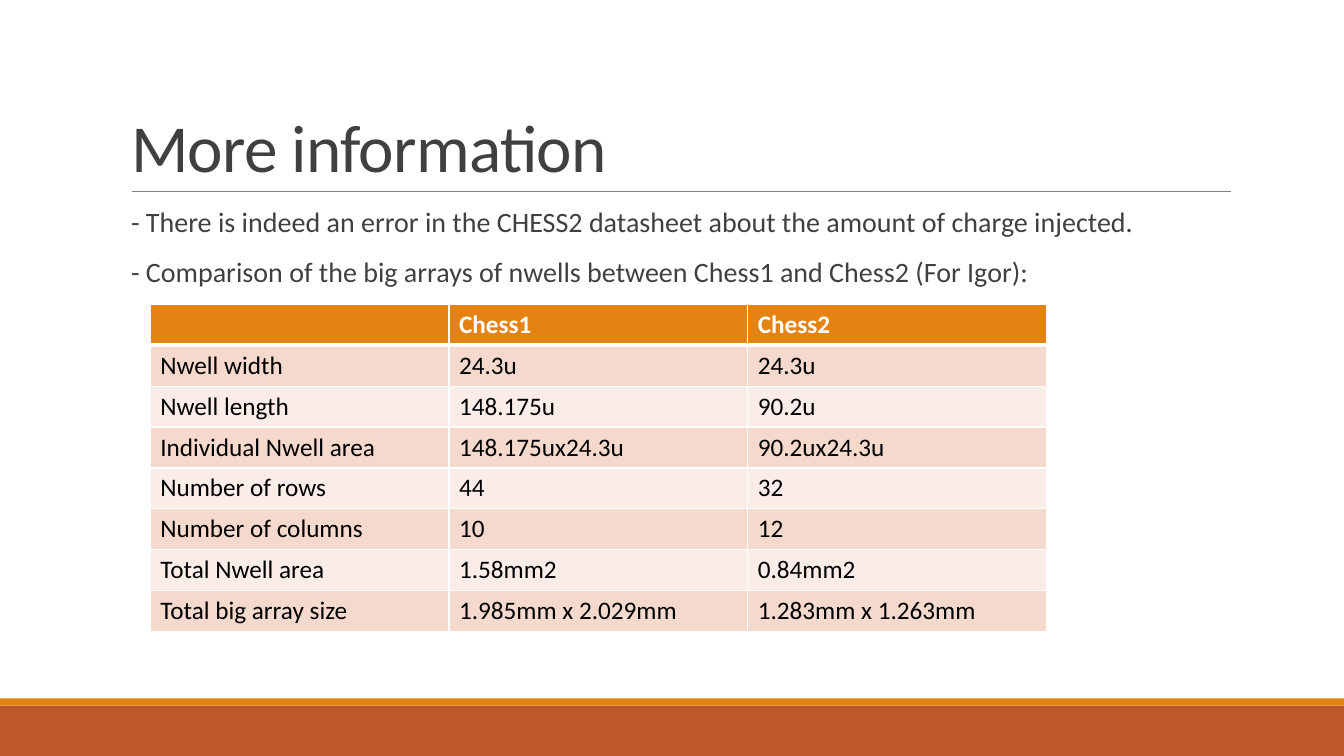
from dataclasses import dataclass

from lxml import etree
from pptx import Presentation
from pptx.dml.color import RGBColor
from pptx.enum import shapes, text
from pptx.oxml import ns
from pptx.util import Inches, Pt


@dataclass(frozen=True)
class Theme:
    font: str = "Calibri"
    orange: str = "E48312"
    rust: str = "BD582C"
    rule: str = "808080"
    ink: str = "404040"
    white: str = "FFFFFF"
    black: str = "000000"
    bands: tuple = ("F5D9CC", "FAEDE7")
    title_size: int = 48
    body_size: int = 20
    table_size: int = 18


THEME = Theme()
POINTS = [
    "- There is indeed an error in the CHESS2 datasheet about the amount of charge injected.",
    "- Comparison of the big arrays of nwells between Chess1 and Chess2 (For Igor):",
]
ROWS = [
    ("", "Chess1", "Chess2"),
    ("Nwell width", "24.3u", "24.3u"),
    ("Nwell length", "148.175u", "90.2u"),
    ("Individual Nwell area", "148.175ux24.3u", "90.2ux24.3u"),
    ("Number of rows", "44", "32"),
    ("Number of columns", "10", "12"),
    ("Total Nwell area", "1.58mm2", "0.84mm2"),
    ("Total big array size", "1.985mm x 2.029mm", "1.283mm x 1.263mm"),
]


def rgb(color):
    return RGBColor.from_string(color)


def style_runs(p, size, color, bold=False):
    for r in p.runs:
        r.font.name = THEME.font
        r.font.size = Pt(size)
        r.font.bold = bold
        r.font.color.rgb = rgb(color)


def place(sp, left, top, width, height):
    sp.left, sp.top = Inches(left), Inches(top)
    sp.width, sp.height = Inches(width), Inches(height)


def add_band(s, top, height, color):
    sp = s.shapes.add_shape(shapes.MSO_SHAPE.RECTANGLE, 0, Inches(top),
                            Inches(13.33), Inches(height))
    sp.shadow.inherit = False
    sp.fill.solid()
    sp.fill.fore_color.rgb = rgb(color)
    sp.line.fill.background()


def add_rule(s, left, right, y):
    line = s.shapes.add_connector(shapes.MSO_CONNECTOR.STRAIGHT, Inches(left),
                                  Inches(y), Inches(right), Inches(y))
    line.line.color.rgb = rgb(THEME.rule)
    line.line.width = Pt(0.5)
    etree.SubElement(line._element.spPr, ns.qn("a:effectLst"))


def fill_title(s, wording):
    sp = s.shapes.title
    place(sp, 1.2, 0.31, 11, 1.59)
    tf = sp.text_frame
    tf.text = wording
    tf.auto_size = text.MSO_AUTO_SIZE.NONE
    tf.vertical_anchor = text.MSO_ANCHOR.BOTTOM
    p = tf.paragraphs[0]
    p.alignment = text.PP_ALIGN.LEFT
    p.line_spacing = 0.85
    style_runs(p, THEME.title_size, THEME.ink)
    p.runs[0].font._element.set("spc", "-50")


def add_blank_bullet(p):
    """Hang the text by a tenth of an inch behind a space as bullet."""
    pPr = p._p.get_or_add_pPr()
    pPr.set("marL", str(Inches(0.1)))
    pPr.set("indent", str(-Inches(0.1)))
    color = etree.SubElement(pPr, ns.qn("a:buClr"))
    etree.SubElement(color, ns.qn("a:srgbClr"), val=THEME.orange)
    etree.SubElement(pPr, ns.qn("a:buChar"), char=" ")


def fill_body(s, points):
    sp = s.placeholders[1]
    place(sp, 1.2, 2.02, 11, 4.4)
    tf = sp.text_frame
    tf.auto_size = text.MSO_AUTO_SIZE.NONE
    tf.margin_left = tf.margin_right = 0
    tf.text = "\n".join(points)
    for i, p in enumerate(tf.paragraphs):
        add_blank_bullet(p)
        p.line_spacing = 0.9
        p.space_before = Pt(12 if i else 0)
        p.space_after = Pt(2)
        style_runs(p, THEME.body_size, THEME.ink)


def add_borders(cell, widths):
    tcPr = cell._tc.get_or_add_tcPr()
    for i, (side, width) in enumerate(widths.items()):
        ln = etree.Element(ns.qn(f"a:ln{side}"), w=str(Pt(width)))
        solid = etree.SubElement(ln, ns.qn("a:solidFill"))
        etree.SubElement(solid, ns.qn("a:srgbClr"), val=THEME.white)
        tcPr.insert(i, ln)


def add_comparison(s, rows):
    n_cols = len(rows[0])
    table = s.shapes.add_table(len(rows), n_cols, Inches(1.49), Inches(3.02),
                               Inches(8.89), Inches(3.24)).table
    for i, row in enumerate(rows):
        header = i == 0
        for j, value in enumerate(row):
            cell = table.cell(i, j)
            cell.text = value
            cell.fill.solid()
            cell.fill.fore_color.rgb = rgb(
                THEME.orange if header else THEME.bands[(i - 1) % 2])
            add_borders(cell, {"L": 1, "R": 1, "T": 3 if i == 1 else 1,
                               "B": 3 if header else 1})
            style_runs(cell.text_frame.paragraphs[0], THEME.table_size,
                       THEME.white if header else THEME.black, header)


def main():
    prs = Presentation()
    prs.slide_width, prs.slide_height = Inches(13.33), Inches(7.5)
    s = prs.slides.add_slide(prs.slide_layouts[1])
    add_band(s, 7, 0.5, THEME.rust)
    add_band(s, 6.93, 0.07, THEME.orange)
    add_rule(s, 1.31, 12.21, 1.9)
    fill_title(s, "More information")
    fill_body(s, POINTS)
    add_comparison(s, ROWS)
    prs.save("out.pptx")


if __name__ == "__main__":
    main()
